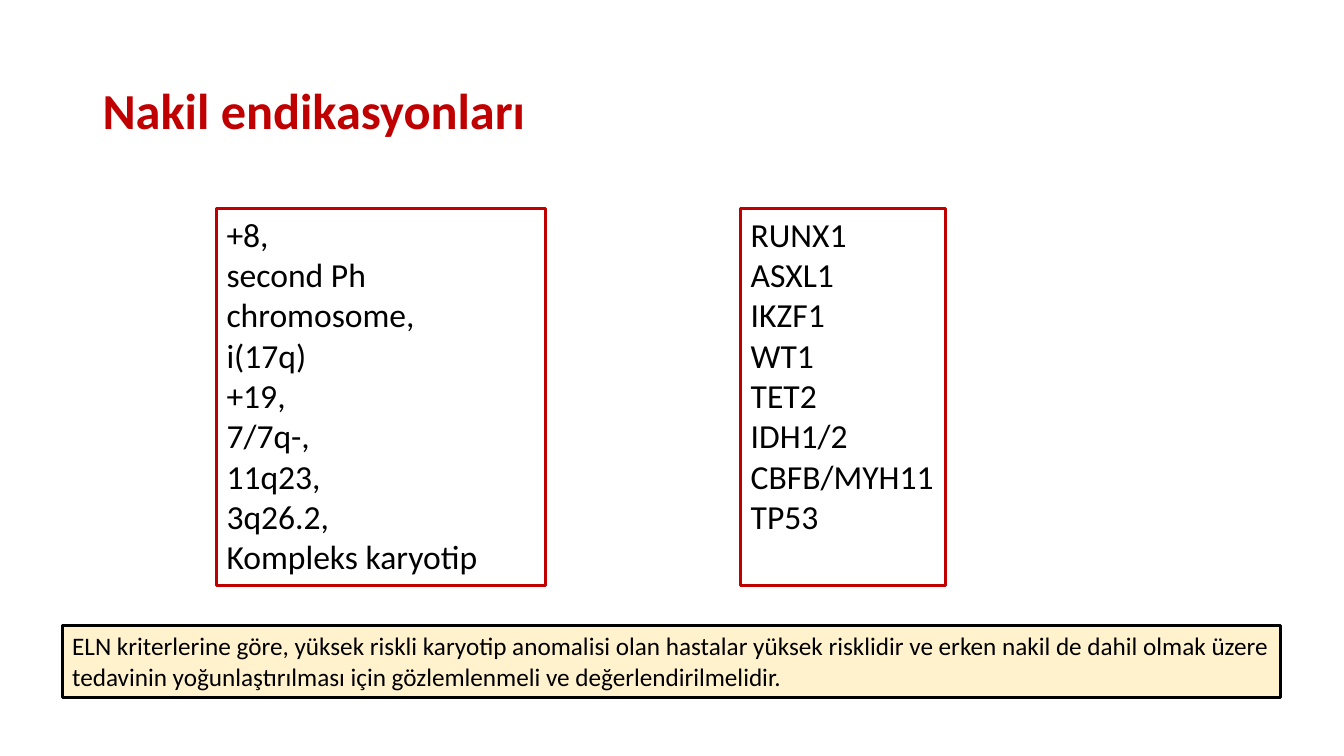
from dataclasses import dataclass

from pptx import Presentation
from pptx.dml.color import RGBColor
from pptx.enum.text import MSO_ANCHOR, MSO_AUTO_SIZE, PP_ALIGN
from pptx.util import Cm, Pt

TITLE = "Nakil endikasyonları"
KARYOTYPES = ["+8,", "second Ph chromosome,", "i(17q)", "+19,", "7/7q-,",
              "11q23,", "3q26.2,", "Kompleks karyotip"]
GENES = ["RUNX1", "ASXL1", "IKZF1", "WT1", "TET2", "IDH1/2", "CBFB/MYH11", "TP53"]
NOTE = ("ELN kriterlerine göre, yüksek riskli karyotip anomalisi olan hastalar "
        "yüksek risklidir ve erken nakil de dahil olmak üzere tedavinin "
        "yoğunlaştırılması için gözlemlenmeli ve değerlendirilmelidir.")

LIST_TOP, LIST_HEIGHT = 5.26, 9.5


@dataclass(frozen=True)
class Theme:
    font: str = "Calibri"
    accent: RGBColor = RGBColor(0xC0, 0x00, 0x00)
    ink: RGBColor = RGBColor(0x00, 0x00, 0x00)
    cream: RGBColor = RGBColor(0xFF, 0xF2, 0xCC)
    title_size: Pt = Pt(36)
    list_size: Pt = Pt(24)
    note_size: Pt = Pt(18)
    border: Pt = Pt(2.25)


THEME = Theme()


def write(frame, lines, size, color, bold=False):
    for index, line in enumerate(lines):
        para = frame.add_paragraph() if index else frame.paragraphs[0]
        para.alignment = PP_ALIGN.LEFT
        span = para.add_run()
        span.text = line
        span.font.name = THEME.font
        span.font.size = size
        span.font.bold = bold
        span.font.color.rgb = color


def add_framed_text(page, place, lines, size, border, fill=None, wrap=True):
    box = page.shapes.add_textbox(*map(Cm, place))
    box.line.color.rgb = border
    box.line.width = THEME.border
    if fill is not None:
        box.fill.solid()
        box.fill.fore_color.rgb = fill
    frame = box.text_frame
    frame.word_wrap = wrap
    frame.auto_size = MSO_AUTO_SIZE.NONE
    write(frame, lines, size, THEME.ink)


def add_title(page):
    title = page.shapes.title
    title.left, title.top, title.width, title.height = map(Cm, (2.33, 1.01, 29.21, 3.68))
    frame = title.text_frame
    frame.vertical_anchor = MSO_ANCHOR.MIDDLE
    write(frame, [TITLE], THEME.title_size, THEME.accent, bold=True)
    frame.paragraphs[0].line_spacing = 0.9


def main():
    """Build the transplant indications slide and save it."""
    deck = Presentation()
    deck.slide_width, deck.slide_height = Cm(33.87), Cm(19.05)
    page = deck.slides.add_slide(deck.slide_layouts.get_by_name("Title Only"))

    add_title(page)
    for left, width, lines, wrap in ((5.46, 8.28, KARYOTYPES, True),
                                     (18.67, 5.16, GENES, False)):
        add_framed_text(page, (left, LIST_TOP, width, LIST_HEIGHT), lines,
                        THEME.list_size, THEME.accent, wrap=wrap)
    add_framed_text(page, (1.57, 15.77, 30.71, 1.8), [NOTE],
                    THEME.note_size, THEME.ink, fill=THEME.cream)
    deck.save("out.pptx")


if __name__ == "__main__":
    main()
